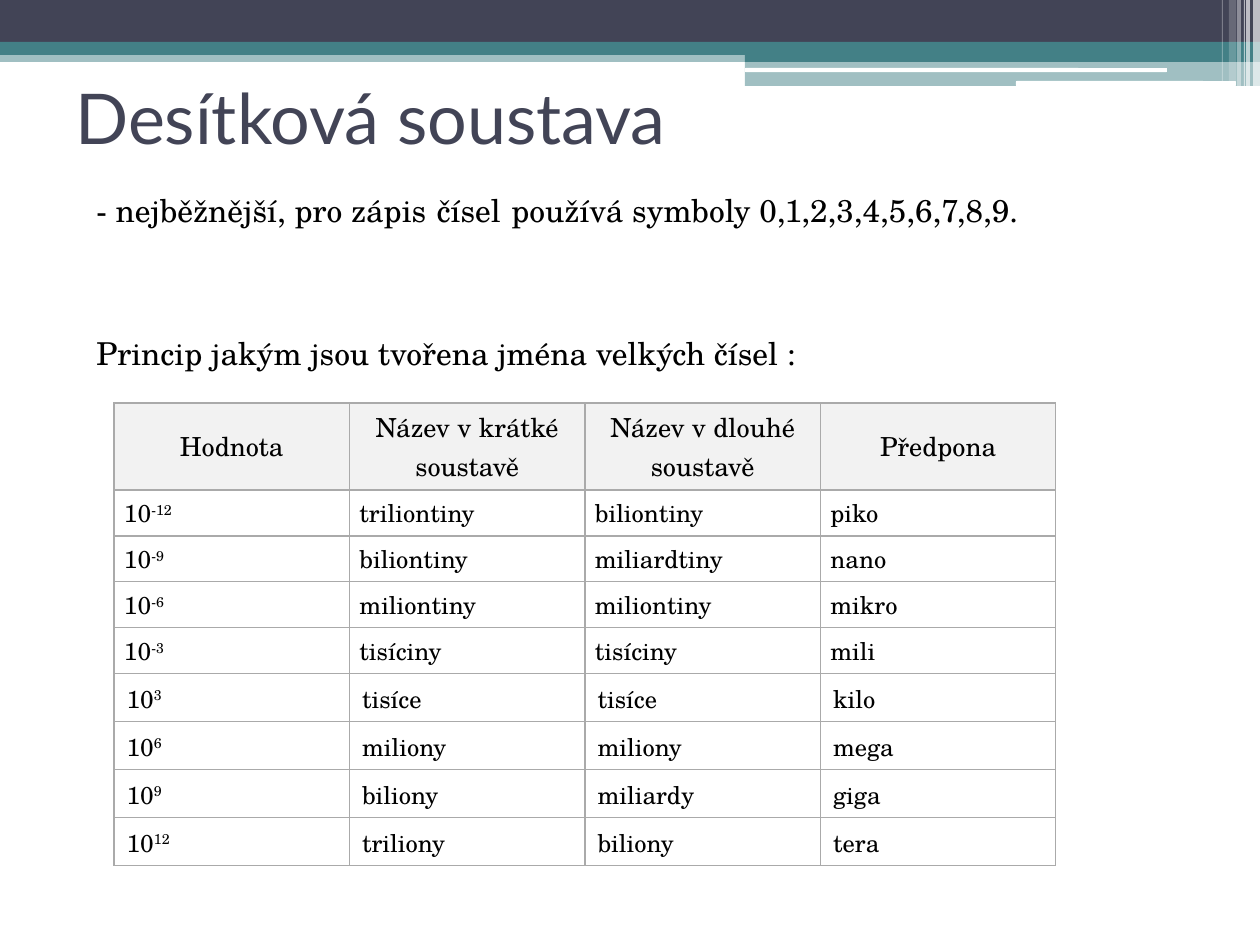
from lxml import etree
from pptx import Presentation
from pptx.dml.color import RGBColor
from pptx.enum import shapes, text
from pptx.oxml.ns import qn
from pptx.util import Pt

NAVY = RGBColor(0x42, 0x44, 0x56)
TEAL = RGBColor(0x43, 0x80, 0x86)
WHITE = RGBColor(0xFF, 0xFF, 0xFF)
BLACK = RGBColor(0, 0, 0)
GREY = RGBColor(0xF2, 0xF2, 0xF2)
EDGE = RGBColor(0xAA, 0xAA, 0xAA)
RECT = shapes.MSO_SHAPE.RECTANGLE
ROUND = shapes.MSO_SHAPE.ROUNDED_RECTANGLE


def px(n):
    return round(n * 914400 / 126)


class Deck:
    sans = "Lato"
    serif = "TeX Gyre Schola"

    def __init__(self):
        self.prs = Presentation()
        self.prs.slide_width, self.prs.slide_height = px(1260), px(945)
        self.slide = self.prs.slides.add_slide(self.prs.slide_layouts[6])

    def font(self, para, size, face, color):
        para.font.size, para.font.name = Pt(size), face
        para.font.color.rgb = color

    def bar(self, box, color, alpha=100, kind=RECT):
        shape = self.slide.shapes.add_shape(kind, *map(px, box))
        shape.shadow.inherit = False
        shape.line.fill.background()
        shape.fill.solid()
        shape.fill.fore_color.rgb = color
        if alpha < 100:
            tone = shape.fill._xPr.find(".//" + qn("a:srgbClr"))
            etree.SubElement(tone, qn("a:alpha"), val=str(alpha * 1000))

    def label(self, box, lines, size, face, color, gap=0,
              anchor=text.MSO_ANCHOR.TOP):
        frame = self.slide.shapes.add_textbox(*map(px, box)).text_frame
        frame.word_wrap = True
        frame.vertical_anchor = anchor
        frame.text = "\n".join(lines)
        for para in frame.paragraphs:
            self.font(para, size, face, color)
        for para in frame.paragraphs[1:]:
            para.space_before = Pt(gap)

    def edges(self, cell):
        props = cell._tc.get_or_add_tcPr()
        for i, side in enumerate(("a:lnL", "a:lnR", "a:lnT", "a:lnB")):
            line = etree.Element(qn(side), w=str(Pt(0.75)))
            fill = etree.SubElement(line, qn("a:solidFill"))
            etree.SubElement(fill, qn("a:srgbClr"), val=str(EDGE))
            props.insert(i, line)

    def cell(self, cell, words, size, fill, power=""):
        cell.fill.solid()
        cell.fill.fore_color.rgb = fill
        cell.vertical_anchor = text.MSO_ANCHOR.MIDDLE
        para = cell.text_frame.paragraphs[0]
        self.font(para, size, self.serif, BLACK)
        para.add_run().text = words
        if power:
            run = para.add_run()
            run.text = power
            run.font._element.set("baseline", "30000")
        self.edges(cell)
        return para

    def table(self, box, heads, rows, tall):
        grid = self.slide.shapes.add_table(
            len(rows) + 1, len(heads), *map(px, box)).table
        grid.horz_banding = False
        for row, high in zip(grid.rows, tall):
            row.height = px(high)
        for cell, words in zip(grid.rows[0].cells, heads):
            para = self.cell(cell, words, 15, GREY)
            para.alignment = text.PP_ALIGN.CENTER
            para.font.bold = False
        for r, (power, *names) in enumerate(rows, 1):
            self.cell(grid.cell(r, 0), "10", 14, WHITE, power)
            for c, name in enumerate(names, 1):
                self.cell(grid.cell(r, c), name, 14, WHITE)
        # Negative powers and the header have tighter margins
        for r in range(5):
            for cell in grid.rows[r].cells:
                cell.margin_left = cell.margin_right = px(10)
                cell.margin_top = cell.margin_bottom = px(5)


def main():
    deck = Deck()

    # Header bands
    deck.bar((0, 50, 1260, 12), TEAL, 50)
    deck.bar((0, 0, 1260, 42), NAVY)
    deck.bar((0, 42, 1260, 13), TEAL)
    deck.bar((745, 49, 515, 13), TEAL)
    deck.bar((745, 62, 515, 24), TEAL, 50)
    deck.bar((745, 68, 422, 4), WHITE, kind=ROUND)
    deck.bar((1016, 81, 220, 5), WHITE, kind=ROUND)

    # Pale stripes in the corner
    for left, wide, high, alpha in (
            (1253, 7, 86, 65), (1246, 4, 86, 65), (1244, 1, 86, 60),
            (1237, 4, 86, 40), (1229, 7, 81, 20), (1222, 1, 81, 30)):
        deck.bar((left, 0, wide, high), WHITE, alpha)

    # Title
    deck.label((63, 38, 1134, 158), ["Desítková soustava"], 40, deck.sans,
               NAVY, anchor=text.MSO_ANCHOR.MIDDLE)

    # Table of powers
    heads = ("Hodnota", "Název v krátké soustavě",
             "Název v dlouhé soustavě", "Předpona")
    rows = (
        ("-12", "triliontiny", "biliontiny", "piko"),
        ("-9", "biliontiny", "miliardtiny", "nano"),
        ("-6", "miliontiny", "miliontiny", "mikro"),
        ("-3", "tisíciny", "tisíciny", "mili"),
        ("3", "tisíce", "tisíce", "kilo"),
        ("6", "miliony", "miliony", "mega"),
        ("9", "biliony", "miliardy", "giga"),
        ("12", "triliony", "biliony", "tera"),
    )
    deck.table((114, 403, 942, 468), heads, rows, [87] + [46] * 4 + [48] * 4)

    # Body text
    deck.label((84, 185, 1111, 204), [
        "- nejběžnější, pro zápis\u00a0čísel\u00a0používá symboly "
        "0,1,2,3,4,5,6,7,8,9.",
        "Princip jakým jsou tvořena jména velkých čísel :",
    ], 18, deck.serif, BLACK, gap=60)

    deck.prs.save("out.pptx")


if __name__ == "__main__":
    main()
